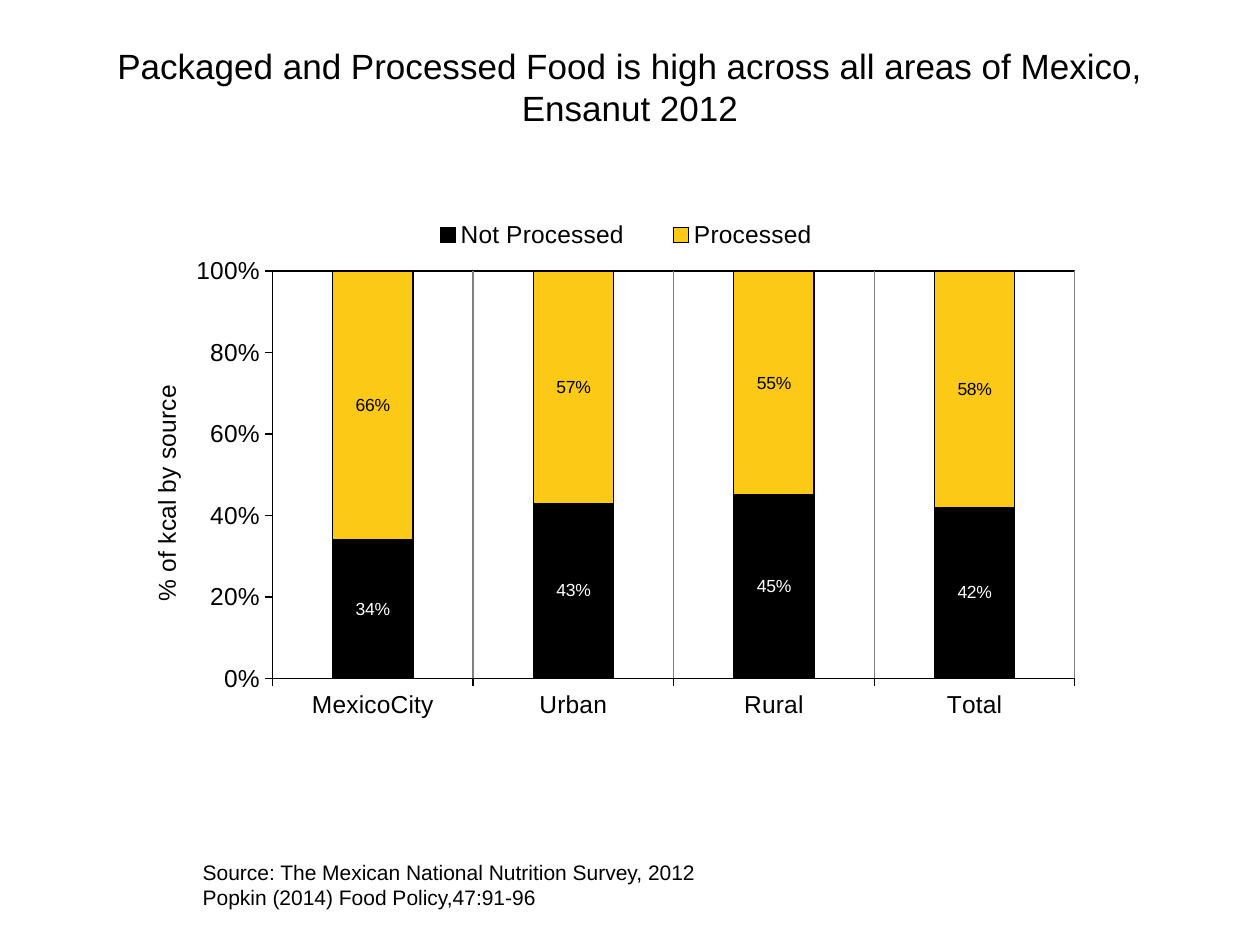
from lxml import etree
from pptx import Presentation
from pptx.chart.data import CategoryChartData
from pptx.dml.color import RGBColor
from pptx.enum import chart as charts, text
from pptx.oxml import ns
from pptx.util import Pt

COLORS = {"ink": "000000", "paper": "FFFFFF", "processed": "FCC917", "grid": "808080"}


class SlideBuilder:
    """Hold the style and the current slide, and add each kind of element."""

    def __init__(self, deck, font="Arial"):
        self.slide = deck.slides.add_slide(deck.slide_layouts[6])
        self.font = font
        background = self.slide.background.fill
        background.solid()
        background.fore_color.rgb = self.color("paper")

    def color(self, name):
        return RGBColor.from_string(COLORS[name])

    def style_font(self, font, size, color="ink"):
        font.name = self.font
        font.size = Pt(size)
        font.bold = False
        font.color.rgb = self.color(color)

    def style_line(self, line, color="ink"):
        line.color.rgb = self.color(color)
        line.width = Pt(0.75)

    def add_text(self, box, lines, size, align=text.PP_ALIGN.LEFT):
        frame = self.slide.shapes.add_textbox(*map(Pt, box)).text_frame
        frame.word_wrap = True
        frame.vertical_anchor = text.MSO_ANCHOR.TOP
        frame.text = "\n".join(lines)
        for paragraph in frame.paragraphs:
            paragraph.alignment = align
            for run in paragraph.runs:
                self.style_font(run.font, size)

    def place(self, parent, index, **fractions):
        for old in parent.findall(ns.qn("c:layout")):
            parent.remove(old)
        layout = etree.Element(ns.qn("c:layout"))
        manual = etree.SubElement(layout, ns.qn("c:manualLayout"))
        settings = {"xMode": "edge", "yMode": "edge", **fractions}
        if parent.tag == ns.qn("c:plotArea"):
            settings = {"layoutTarget": "inner", **settings}
        for name, value in settings.items():
            etree.SubElement(manual, ns.qn(f"c:{name}")).set("val", str(value))
        parent.insert(index, layout)

    def add_stacked_chart(self, box, categories, series, axis_title):
        data = CategoryChartData(number_format="0%")
        data.categories = categories
        for name, values, _, _ in series:
            data.add_series(name, values)
        chart = self.slide.shapes.add_chart(
            charts.XL_CHART_TYPE.COLUMN_STACKED_100, *map(Pt, box), data).chart
        chart.has_title = False
        self.style_font(chart.font, 18)
        self.style_axes(chart, axis_title)
        self.style_series(chart.plots[0], series)
        chart.has_legend = True
        chart.legend.position = charts.XL_LEGEND_POSITION.TOP
        chart.legend.include_in_layout = False
        self.style_font(chart.legend.font, 14)
        self.arrange(chart)

    def style_axes(self, chart, title):
        for axis in (chart.category_axis, chart.value_axis):
            self.style_font(axis.tick_labels.font, 14)
            self.style_line(axis.format.line)
            axis.major_tick_mark = charts.XL_TICK_MARK.OUTSIDE
            axis.minor_tick_mark = charts.XL_TICK_MARK.NONE
        chart.category_axis.has_major_gridlines = True
        self.style_line(chart.category_axis.major_gridlines.format.line, "grid")
        percent = chart.value_axis
        percent.has_major_gridlines = False
        percent.minimum_scale, percent.maximum_scale = 0, 1
        percent.major_unit = 0.2
        percent.tick_labels.number_format = "0%"
        percent.tick_labels.number_format_is_linked = False
        heading = percent.axis_title.text_frame
        heading.text = title
        self.style_font(heading.paragraphs[0].runs[0].font, 14)

    def style_series(self, plot, series):
        plot.gap_width, plot.overlap = 150, 100
        plot.vary_by_categories = False
        for column, (_, _, fill, label_color) in zip(plot.series, series):
            column.format.fill.solid()
            column.format.fill.fore_color.rgb = self.color(fill)
            self.style_line(column.format.line)
            labels = column.data_labels
            labels.show_value = True
            labels.number_format = "0%"
            labels.number_format_is_linked = False
            self.style_font(labels.font, 10, label_color)

    def arrange(self, chart):
        root = chart.element if hasattr(chart, "element") else chart._chartSpace
        plot_area = root.find(".//" + ns.qn("c:plotArea"))
        self.place(plot_area, 0, x=0.155, y=0.153, w=0.794, h=0.659)
        self.place(root.find(".//" + ns.qn("c:legend")), 1, x=0.28, y=0.07, w=0.45, h=0.05)
        self.place(plot_area.find(".//" + ns.qn("c:title")), 1, x=0.03, y=0.33)
        border = etree.SubElement(plot_area, ns.qn("c:spPr"))
        etree.SubElement(border, ns.qn("a:noFill"))
        line = etree.SubElement(border, ns.qn("a:ln"), w=str(Pt(0.75)))
        solid = etree.SubElement(line, ns.qn("a:solidFill"))
        etree.SubElement(solid, ns.qn("a:srgbClr"), val=COLORS["ink"])


def main():
    deck = Presentation()
    deck.slide_width, deck.slide_height = Pt(720), Pt(540)
    builder = SlideBuilder(deck)
    builder.add_stacked_chart(
        (66.24, 100.8, 577.44, 353.52),
        ["MexicoCity", "Urban", "Rural", "Total"],
        [("Not Processed", (0.34, 0.43, 0.45, 0.42), "ink", "paper"),
         ("Processed", (0.66, 0.57, 0.55, 0.58), "processed", "ink")],
        "% of kcal by source")
    builder.add_text(
        (108.72, 487.44, 301.68, 36),
        ["Source: The Mexican National Nutrition Survey, 2012",
         "Popkin (2014) Food Policy,47:91-96"], 12)
    builder.add_text(
        (36, 21.6, 648, 90),
        ["Packaged and Processed Food is high across all areas of Mexico, Ensanut 2012"],
        20, text.PP_ALIGN.CENTER)
    deck.save("out.pptx")


if __name__ == "__main__":
    main()
